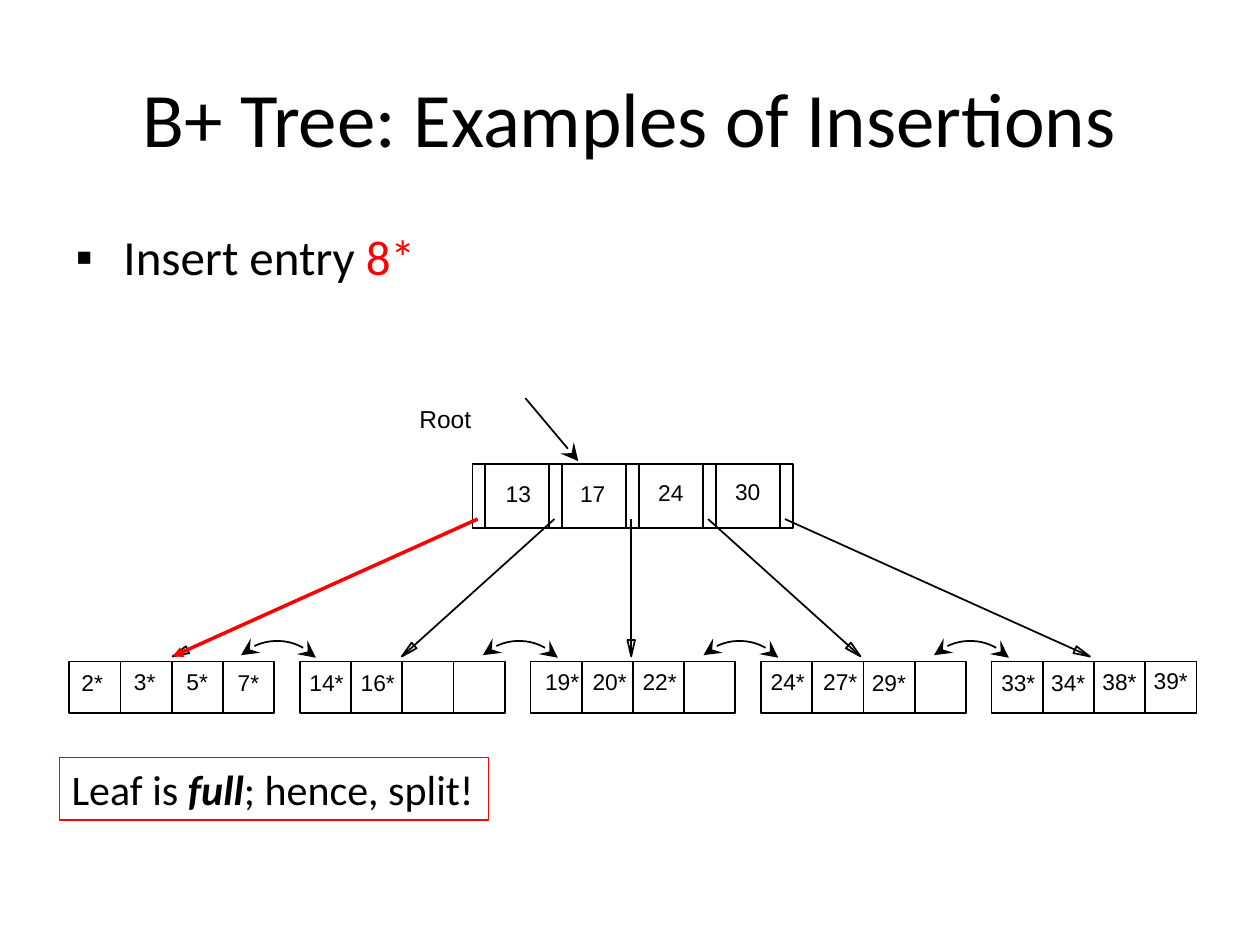
import math
from dataclasses import dataclass
from typing import NamedTuple

from lxml import etree
from pptx import Presentation
from pptx.dml.color import RGBColor
from pptx.enum.shapes import MSO_CONNECTOR, MSO_SHAPE
from pptx.enum.text import MSO_ANCHOR, PP_ALIGN
from pptx.oxml.ns import qn
from pptx.util import Inches, Pt

STRAIGHT = MSO_CONNECTOR.STRAIGHT
RECTANGLE = MSO_SHAPE.RECTANGLE
LEFT, CENTER = PP_ALIGN.LEFT, PP_ALIGN.CENTER
TOP, MIDDLE = MSO_ANCHOR.TOP, MSO_ANCHOR.MIDDLE


@dataclass(frozen=True)
class Theme:
    ink: RGBColor = RGBColor(0, 0, 0)
    accent: RGBColor = RGBColor(255, 0, 0)
    heading_font: str = "Calibri"
    tree_font: str = "Arial"
    title: float = 44
    body: float = 28
    note: float = 24
    root: float = 14
    key: float = 13
    thin: float = 0.75
    line: float = 1
    thick: float = 2


class Point(NamedTuple):
    x: float
    y: float


class Box(NamedTuple):
    left: float
    top: float
    width: float
    height: float

    def inches(self) -> list:
        return [Inches(value) for value in self]


class Arrowhead(NamedTuple):
    kind: str
    size: str


class Key(NamedTuple):
    """A key and how far its label sits from the default place in its cell."""
    text: str
    dx: float = 0
    dy: float = 0


THEME = Theme()
STEALTH = Arrowhead("stealth", "lg")
TRIANGLE = Arrowhead("triangle", "med")

# Everything in the tree is measured in leaf cells; a leaf plus its gap is 4.5 cells.
LEAF_STEP = 1.83
CELL = LEAF_STEP / 4.5
LEAF_CELLS = 4
LEAVES_AT = Point(0.55, 5.25)
ROOT_AT = Point(3.75, 3.68)
ROOT_STEP, ROOT_HEIGHT, SLOT = 1.5 * CELL, 1.25 * CELL, 0.25 * CELL
POINTER_START, POINTER_START_STEP = Point(3.79, 4.12), 0.61
POINTER_END, POINTER_END_STEP = Point(1.37, 5.21), 1.82
LABEL_HEIGHT = 0.32
LABEL_WIDTHS = {"root": 0.4, 2: 0.37, 3: 0.47}

ROOT_KEYS = [Key("13", 0.01, 0.01), Key("17", -0.01, 0.01), Key("24"), Key("30", 0, -0.01)]
LEAVES = [
    [Key("2*", -0.02, 0.01), Key("3*", -0.01), Key("5*"), Key("7*", 0, 0.01)],
    [Key("14*", 0.01, 0.01), Key("16*", 0.01, 0.01)],
    [Key("19*", 0.05), Key("20*", 0.02), Key("22*", 0.01)],
    [Key("24*", 0.01), Key("27*", 0.02), Key("29*", 0, 0.01)],
    [Key("33*", 0.01, 0.01), Key("34*", 0, 0.01), Key("38*"), Key("39*", 0, -0.01)],
]
SIBLING_LINKS_LEFT = [2.0, 3.92, 5.67, 7.5]


def add_run(paragraph, text: str, size: float, font: str = THEME.heading_font,
            color: RGBColor = THEME.ink, emphasis: bool = False) -> None:
    run = paragraph.add_run()
    run.text = text
    run.font.name, run.font.size = font, Pt(size)
    run.font.color.rgb = color
    run.font.bold = run.font.italic = emphasis


def set_outline(shape, color: RGBColor = THEME.ink, width: float = THEME.line,
                head: Arrowhead | None = None, tail: Arrowhead | None = None) -> None:
    shape.line.color.rgb = color
    shape.line.width = Pt(width)
    ln = shape.line._get_or_add_ln()
    for tag, arrow in (("a:headEnd", head), ("a:tailEnd", tail)):
        if arrow:
            etree.SubElement(ln, qn(tag), type=arrow.kind, w=arrow.size, len=arrow.size)


def add_outlined_box(slide, box: Box, color: RGBColor = THEME.ink, width: float = THEME.line):
    shape = slide.shapes.add_shape(RECTANGLE, *box.inches())
    shape.shadow.inherit = False
    shape.fill.background()
    set_outline(shape, color, width)
    return shape


def add_line(slide, start: Point, end: Point, color: RGBColor = THEME.ink,
             width: float = THEME.line, tail: Arrowhead | None = None) -> None:
    line = slide.shapes.add_connector(STRAIGHT, *map(Inches, (*start, *end)))
    set_outline(line, color, width, tail=tail)
    etree.SubElement(line._element.spPr, qn("a:effectLst"))


def add_outline(slide, points: list[Point], close: bool):
    vertices = [(Inches(x), Inches(y)) for x, y in points]
    builder = slide.shapes.build_freeform(*vertices[0])
    builder.add_line_segments(vertices[1:], close=close)
    shape = builder.convert_to_shape()
    shape.shadow.inherit = False
    shape.fill.background()
    return shape


def add_label(slide, box: Box, text: str, size: float) -> None:
    frame = slide.shapes.add_textbox(*box.inches()).text_frame
    frame.word_wrap = False
    add_run(frame.paragraphs[0], text, size, THEME.tree_font)


def add_key(slide, key: Key, center: float, top: float, width: float) -> None:
    box = Box(center - width / 2 + key.dx, top + key.dy, width, LABEL_HEIGHT)
    add_label(slide, box, key.text, THEME.key)


def add_root(slide) -> None:
    """Each key has a narrow pointer slot on its left; one more slot ends the node."""
    for i, key in enumerate(ROOT_KEYS):
        left = ROOT_AT.x + i * ROOT_STEP
        add_outlined_box(slide, Box(left, ROOT_AT.y, ROOT_STEP, ROOT_HEIGHT))
        divider = left + SLOT
        add_line(slide, Point(divider, ROOT_AT.y), Point(divider, ROOT_AT.y + ROOT_HEIGHT))
        add_key(slide, key, left + (SLOT + ROOT_STEP) / 2, ROOT_AT.y + 0.07, LABEL_WIDTHS["root"])
    end = ROOT_AT.x + len(ROOT_KEYS) * ROOT_STEP
    add_outlined_box(slide, Box(end, ROOT_AT.y, SLOT, ROOT_HEIGHT))
    add_label(slide, Box(3.23, 3.16, 0.64, 0.33), "Root", THEME.root)
    add_line(slide, Point(4.17, 3.16), Point(4.59, 3.66), tail=STEALTH)


def add_leaf(slide, index: int, keys: list[Key]) -> None:
    left = LEAVES_AT.x + index * LEAF_STEP
    for column in range(LEAF_CELLS):
        add_outlined_box(slide, Box(left + column * CELL, LEAVES_AT.y, CELL, CELL))
    for column, key in enumerate(keys):
        center = left + (column + 0.5) * CELL
        add_key(slide, key, center, LEAVES_AT.y, LABEL_WIDTHS[len(key.text)])


def pointer_ends(index: int) -> tuple[Point, Point]:
    return (Point(POINTER_START.x + index * POINTER_START_STEP, POINTER_START.y),
            Point(POINTER_END.x + index * POINTER_END_STEP, POINTER_END.y))


def add_pointer(slide, index: int, length: float = 0.13, half_width: float = 0.03) -> None:
    """Line from a root slot to a leaf, tipped with a hollow triangle."""
    start, tip = pointer_ends(index)
    add_line(slide, start, tip)
    reach = math.dist(start, tip)
    ux, uy = (tip.x - start.x) / reach, (tip.y - start.y) / reach
    base = Point(tip.x - length * ux, tip.y - length * uy)
    corners = [Point(base.x - side * uy, base.y + side * ux) for side in (half_width, -half_width)]
    set_outline(add_outline(slide, [corners[0], tip, corners[1]], close=True))


def add_sibling_link(slide, left: float, top: float = 5, radius: float = 0.42) -> None:
    """Quarter circle turned to arch between two neighbouring leaves."""
    angles = [math.radians(degrees) for degrees in range(0, 91, 5)]
    points = [Point(left + radius * math.sin(a), top + radius * (1 - math.cos(a))) for a in angles]
    link = add_outline(slide, points, close=False)
    link.rotation = 317
    set_outline(link, head=STEALTH, tail=STEALTH)


def add_heading_and_task(slide) -> None:
    title, body = slide.placeholders
    title.left, title.top, title.width, title.height = Box(0.5, 0.3, 9, 1.25).inches()
    title.text_frame.vertical_anchor = MIDDLE
    heading = title.text_frame.paragraphs[0]
    heading.alignment = CENTER
    add_run(heading, "B+ Tree: Examples of Insertions", THEME.title)

    body.left, body.top, body.width, body.height = Box(0.5, 1.75, 9, 5.42).inches()
    task = body.text_frame.paragraphs[0]
    properties = task._p.get_or_add_pPr()
    properties.set("marL", str(Inches(0.38)))
    properties.set("indent", str(-Inches(0.38)))
    etree.SubElement(properties, qn("a:buFont")).set("typeface", THEME.tree_font)
    etree.SubElement(properties, qn("a:buChar")).set("char", "▪")
    add_run(task, "Insert entry ", THEME.body)
    add_run(task, "8*", THEME.body, color=THEME.accent)


def add_split_note(slide) -> None:
    frame = add_outlined_box(slide, Box(0.47, 6.01, 3.41, 0.5), THEME.accent, THEME.thin).text_frame
    frame.word_wrap, frame.vertical_anchor = False, TOP
    note = frame.paragraphs[0]
    note.alignment = LEFT
    for text, emphasis in (("Leaf is ", False), ("full", True), ("; hence, split!", False)):
        add_run(note, text, THEME.note, emphasis=emphasis)


def main() -> None:
    deck = Presentation()
    deck.slide_width, deck.slide_height = Inches(10), Inches(7.5)
    slide = deck.slides.add_slide(deck.slide_layouts[1])
    add_heading_and_task(slide)
    add_root(slide)
    for index, keys in enumerate(LEAVES):
        add_leaf(slide, index, keys)
        add_pointer(slide, index)
    for left in SIBLING_LINKS_LEFT:
        add_sibling_link(slide, left)
    add_line(slide, *pointer_ends(0), THEME.accent, THEME.thick, tail=TRIANGLE)
    add_split_note(slide)
    deck.save("out.pptx")


if __name__ == "__main__":
    main()
